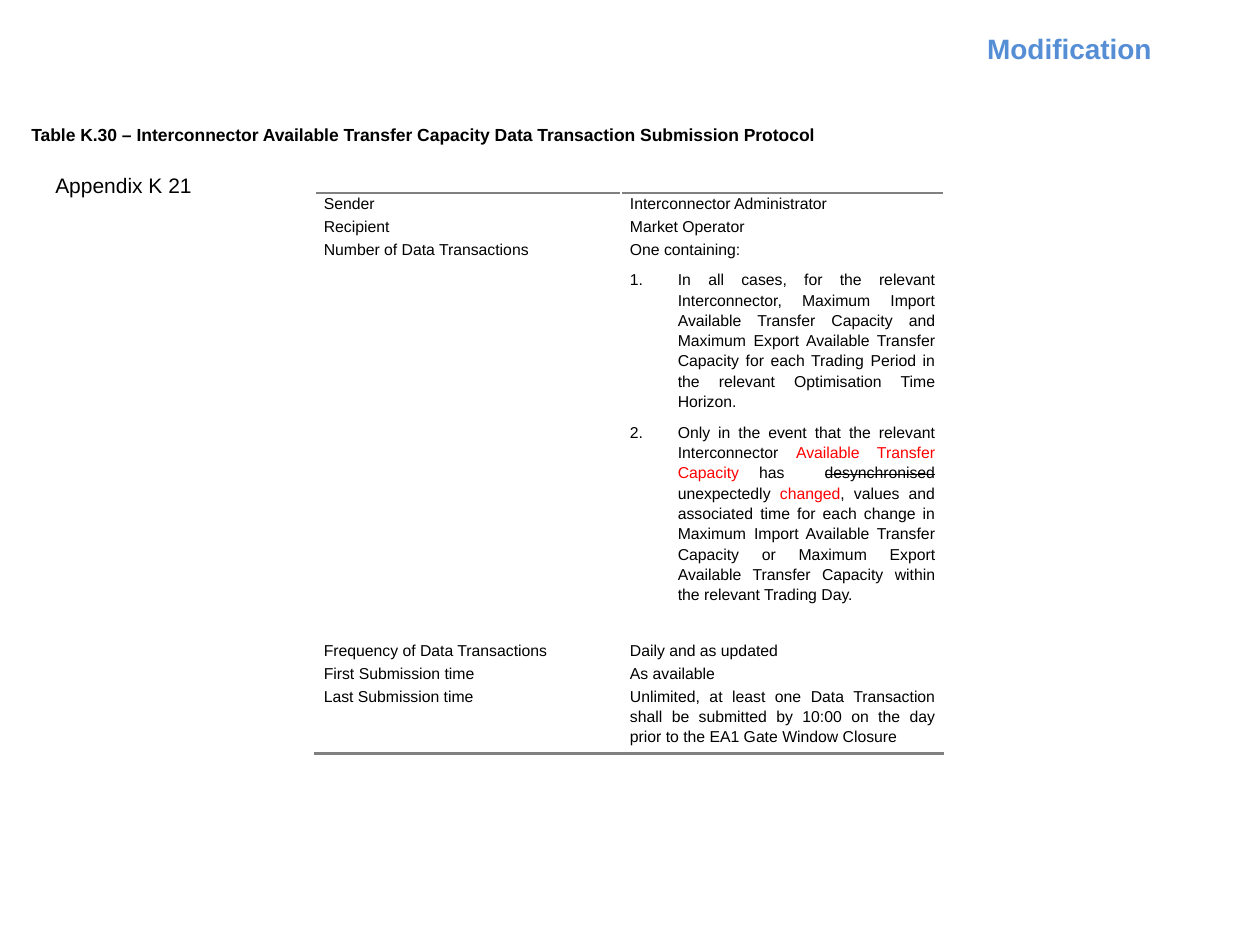
from lxml.etree import SubElement
from pptx import Presentation
from pptx.dml.color import RGBColor
from pptx.enum.text import MSO_ANCHOR as Anchor, MSO_AUTO_SIZE as AutoSize, PP_ALIGN as Align
from pptx.oxml import parse_xml
from pptx.oxml.ns import nsdecls, qn
from pptx.util import Inches, Pt

BLACK = RGBColor(0x00, 0x00, 0x00)
RED = RGBColor(0xFF, 0x00, 0x00)
BLUE = RGBColor(0x55, 0x8E, 0xD5)
GREY = RGBColor(0x80, 0x80, 0x80)

COLUMN_WIDTHS = (24.3, 25.6)
ROW_HEIGHTS = (1.8, 1.8, 31.9, 1.8, 1.8, 5.4)

CASES = (
    [("One containing:", {})],
    [("In all cases, for the relevant Interconnector, Maximum Import Available Transfer "
      "Capacity and Maximum Export Available Transfer Capacity for each Trading Period in "
      "the relevant Optimisation Time Horizon.", {})],
    [("Only in the event that the relevant Interconnector ", {}),
     ("Available Transfer Capacity", {"color": RED}),
     (" has  ", {}),
     ("desynchronised", {"strike": True}),
     (" unexpectedly ", {}),
     ("changed", {"color": RED}),
     (", values and associated time for each change in Maximum Import Available Transfer "
      "Capacity or Maximum Export Available Transfer Capacity within the relevant "
      "Trading Day.", {})],
)

PROTOCOL = (
    ("Sender", "Interconnector Administrator"),
    ("Recipient", "Market Operator"),
    ("Number of Data Transactions", CASES),
    ("Frequency of Data Transactions", "Daily and as updated"),
    ("First Submission time", "As available"),
    ("Last Submission time", "Unlimited, at least one Data Transaction shall be submitted "
     "by 10:00 on the day prior to the EA1 Gate Window Closure"),
)


class SlideBuilder:
    """Places styled elements on the current slide, on a grid of 100 columns by 75 rows."""

    font_name = "Arial"
    table_size = 9
    line_spacing = 1.15
    paragraph_gap = Pt(3)
    list_indent = Inches(0.38)
    cell_margin = Inches(0.07)

    def __init__(self, presentation):
        self.unit = presentation.slide_width / 100
        self.slide = presentation.slides.add_slide(presentation.slide_layouts[5])

    def grid(self, *units):
        return [round(value * self.unit) for value in units]

    def run(self, paragraph, text, size, color=BLACK, bold=False, strike=False):
        run = paragraph.add_run()
        run.text = text
        run.font.name = self.font_name
        run.font.size = Pt(size)
        run.font.bold = bold
        run.font.color.rgb = color
        if strike:
            run._r.get_or_add_rPr().set("strike", "sngStrike")

    def title(self, text, area, size, color):
        shape = self.slide.shapes.title
        shape.left, shape.top, shape.width, shape.height = self.grid(*area)
        frame = shape.text_frame
        frame.vertical_anchor = Anchor.TOP
        frame.auto_size = AutoSize.SHAPE_TO_FIT_TEXT
        frame.paragraphs[0].alignment = Align.RIGHT
        self.run(frame.paragraphs[0], text, size, color, bold=True)

    def label(self, text, area, size, bold=False, anchor=Anchor.TOP):
        frame = self.slide.shapes.add_textbox(*self.grid(*area)).text_frame
        frame.word_wrap = False
        frame.auto_size = AutoSize.SHAPE_TO_FIT_TEXT
        frame.vertical_anchor = anchor
        self.run(frame.paragraphs[0], text, size, bold=bold)

    def number(self, paragraph):
        properties = paragraph._p.get_or_add_pPr()
        properties.set("marL", str(self.list_indent))
        properties.set("indent", str(-self.list_indent))
        SubElement(properties, qn("a:buFont"), typeface=self.font_name)
        SubElement(properties, qn("a:buAutoNum"), type="arabicPeriod")

    def border(self, cell, side, width):
        cell._tc.get_or_add_tcPr().insert(0, parse_xml(
            f'<a:{side} {nsdecls("a")} w="{Pt(width)}"><a:solidFill>'
            f'<a:srgbClr val="{GREY}"/></a:solidFill></a:{side}>'))

    def fill_cell(self, cell, content):
        cell.fill.background()
        cell.margin_left = cell.margin_right = self.cell_margin
        cell.margin_top = cell.margin_bottom = 0
        paragraphs = ([(content, {})],) if isinstance(content, str) else content
        for index, runs in enumerate(paragraphs):
            frame = cell.text_frame
            paragraph = frame.add_paragraph() if index else frame.paragraphs[0]
            if index:
                self.number(paragraph)
                paragraph.space_before = self.paragraph_gap
            paragraph.alignment = Align.JUSTIFY
            paragraph.line_spacing = self.line_spacing
            paragraph.space_after = self.paragraph_gap
            for text, style in runs:
                self.run(paragraph, text, self.table_size, **style)

    def table(self, rows, left, top, widths, heights):
        area = self.grid(left, top, sum(widths), sum(heights))
        table = self.slide.shapes.add_table(len(heights), len(widths), *area).table
        table.first_row = table.horz_banding = False
        for column, width in zip(table.columns, self.grid(*widths)):
            column.width = width
        for row, height, contents in zip(table.rows, self.grid(*heights), rows):
            row.height = height
            for cell, content in zip(row.cells, contents):
                self.fill_cell(cell, content)
        for column in range(len(widths)):
            self.border(table.cell(0, column), "lnT", 1)
            self.border(table.cell(len(heights) - 1, column), "lnB", 1.5)


def main():
    presentation = Presentation()
    presentation.slide_width, presentation.slide_height = Inches(10), Inches(7.5)
    builder = SlideBuilder(presentation)
    builder.title("Modification", (9.4, 2, 83, 3.7), 16, BLUE)
    builder.label("Appendix K 21", (3.4, 13.2, 12.9, 3), 12)
    builder.table(PROTOCOL, 25, 15.3, COLUMN_WIDTHS, ROW_HEIGHTS)
    builder.label("Table K.30 – Interconnector Available Transfer Capacity Data Transaction "
                  "Submission Protocol", (1.5, 8.2, 100, 5), 10, True, Anchor.MIDDLE)
    presentation.save("out.pptx")


if __name__ == "__main__":
    main()
